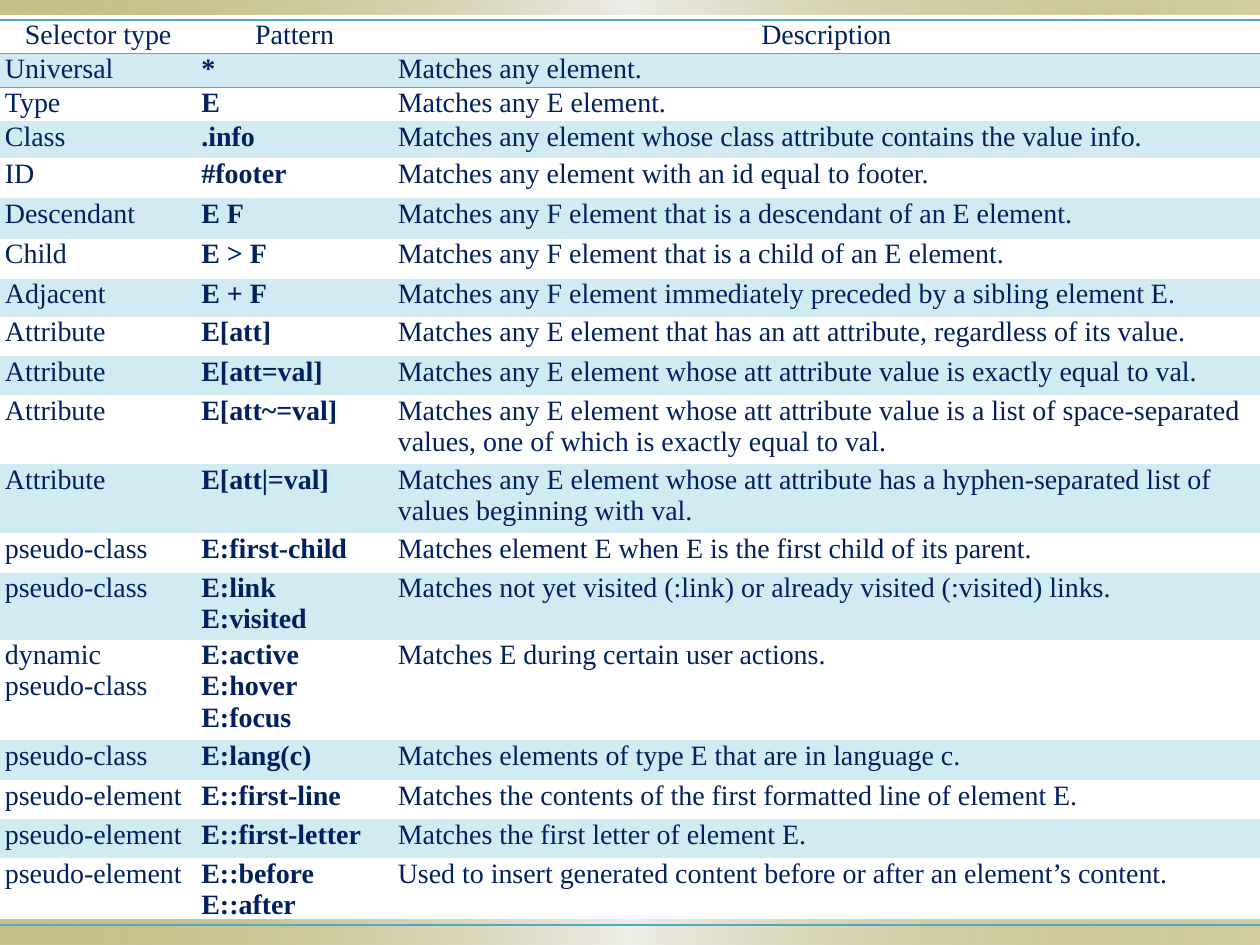
from copy import deepcopy

from lxml import etree
from pptx import Presentation
from pptx.dml.color import RGBColor
from pptx.enum import shapes, text
from pptx.oxml import ns
from pptx.util import Cm, Pt

HEAD = ("Selector type", "Pattern", "Description")
BODY = [
    (0.68, "Universal", "*", "Matches any element."),
    (0.68, "Type", "E", "Matches any E element."),
    (0.75, "Class", ".info", "Matches any element whose class attribute contains the value info."),
    (0.81, "ID", "#footer", "Matches any element with an id equal to footer."),
    (0.81, "Descendant", "E F", "Matches any F element that is a descendant of an E element."),
    (0.81, "Child", "E > F", "Matches any F element that is a child of an E element."),
    (0.77, "Adjacent", "E + F", "Matches any F element immediately preceded by a sibling element E."),
    (0.79, "Attribute", "E[att]", "Matches any E element that has an att attribute, regardless of its value."),
    (0.79, "Attribute", "E[att=val]", "Matches any E element whose att attribute value is exactly equal to val."),
    (1.39, "Attribute", "E[att~=val]", "Matches any E element whose att attribute value is a list of "
     "space-separated values, one of which is exactly equal to val."),
    (1.39, "Attribute", "E[att|=val]", "Matches any E element whose att attribute has a "
     "hyphen-separated list of values beginning with val."),
    (0.80, "pseudo-class", "E:first-child", "Matches element E when E is the first child of its parent."),
    (1.35, "pseudo-class", "E:link\vE:visited",
     "Matches not yet visited (:link) or already visited (:visited) links."),
    (2.02, "dynamic pseudo-class", "E:active\vE:hover\vE:focus", "Matches E during certain user actions."),
    (0.81, "pseudo-class", "E:lang(c)", "Matches elements of type E that are in language c."),
    (0.79, "pseudo-element", "E::first-line", "Matches the contents of the first formatted line of element E."),
    (0.78, "pseudo-element", "E::first-letter", "Matches the first letter of element E."),
    (1.35, "pseudo-element", "E::before\vE::after",
     "Used to insert generated content before or after an element’s content."),
]
ROWS = [(0.68, *HEAD)] + BODY
COLS = (3.96, 3.96, 17.48)
BARS = [(18.54, 0.51), (0, 0.3)]
WIDE, HIGH, TOP = 25.4, 19.05, 0.4
THEME = {
    "font": "Times New Roman", "size": Pt(16), "ink": "002060",
    "band": "D2EAF1", "rule": "4BACC6", "thick": Pt(1),
    "fade": [(0, "918415", 50), (50, "EEEDE8", 100), (100, "918415", 40)],
}
PLAIN = "{2D5ABB26-0587-4C30-8999-92F81FD0307C}"
INSET = {"margin_left": Cm(0.1), "margin_right": Cm(0.1), "margin_top": 0, "margin_bottom": 0}


def node(tag, kids="", **atts):
    pairs = "".join(f' {key}="{val}"' for key, val in atts.items())
    return f'<a:{tag} xmlns:a="{ns.nsuri("a")}"{pairs}>{kids}</a:{tag}>'


def draw_bar(slide, top, high):
    bar = slide.shapes.add_shape(shapes.MSO_SHAPE.RECTANGLE, 0, Cm(top), Cm(WIDE), Cm(high))
    bar.shadow.inherit = False
    bar.line.fill.background()
    stops = "".join(
        node("gs", node("srgbClr", node("alpha", val=alpha * 1000), val=hue), pos=spot * 1000)
        for spot, hue, alpha in THEME["fade"])
    fade = node("gradFill", node("gsLst", stops) + node("lin", ang=0, scaled=0), rotWithShape=1)
    bar._element.spPr.find(ns.qn("a:prstGeom")).addnext(etree.fromstring(fade))


def rule_cell(cell, edges):
    paint = node("solidFill", node("srgbClr", val=THEME["rule"]))
    for spot, edge in enumerate(edges):
        line = node(edge, paint, w=int(THEME["thick"]))
        cell._tc.get_or_add_tcPr().insert(spot, etree.fromstring(line))


def fill_cell(cell, words, row, col):
    for key, val in INSET.items():
        setattr(cell, key, val)
    cell.text_frame.text = words
    para = cell.text_frame.paragraphs[0]
    para.alignment = text.PP_ALIGN.LEFT if row else text.PP_ALIGN.CENTER
    face = {"name": THEME["font"], "size": THEME["size"], "bold": row > 0 and col == 1}
    for run in para.runs:
        for key, val in face.items():
            setattr(run.font, key, val)
        run.font.color.rgb = RGBColor.from_string(THEME["ink"])
    for gap in para._p.findall(ns.qn("a:br")):
        gap.append(deepcopy(para.runs[0]._r.find(ns.qn("a:rPr"))))
    if row % 2:
        cell.fill.solid()
        cell.fill.fore_color.rgb = RGBColor.from_string(THEME["band"])
    else:
        cell.fill.background()
    last = len(ROWS) - 1
    rule_cell(cell, {0: ("lnT", "lnB"), 1: ("lnT",), last: ("lnB",)}.get(row, ()))


def draw_grid(slide):
    high = sum(row[0] for row in ROWS)
    frame = slide.shapes.add_table(len(ROWS), len(COLS), 0, Cm(TOP), Cm(WIDE), Cm(high))
    grid = frame.table
    grid.first_row = grid.horz_banding = False
    grid._tbl.tblPr.find(ns.qn("a:tableStyleId")).text = PLAIN
    for col, wide in enumerate(COLS):
        grid.columns[col].width = Cm(wide)
    for row, (tall, *cells) in enumerate(ROWS):
        grid.rows[row].height = Cm(tall)
        for col, words in enumerate(cells):
            fill_cell(grid.cell(row, col), words, row, col)


def main():
    deck = Presentation()
    deck.slide_width, deck.slide_height = Cm(WIDE), Cm(HIGH)
    slide = deck.slides.add_slide(deck.slide_layouts[6])
    for top, high in BARS:
        draw_bar(slide, top, high)
    draw_grid(slide)
    deck.save("out.pptx")


if __name__ == "__main__":
    main()
